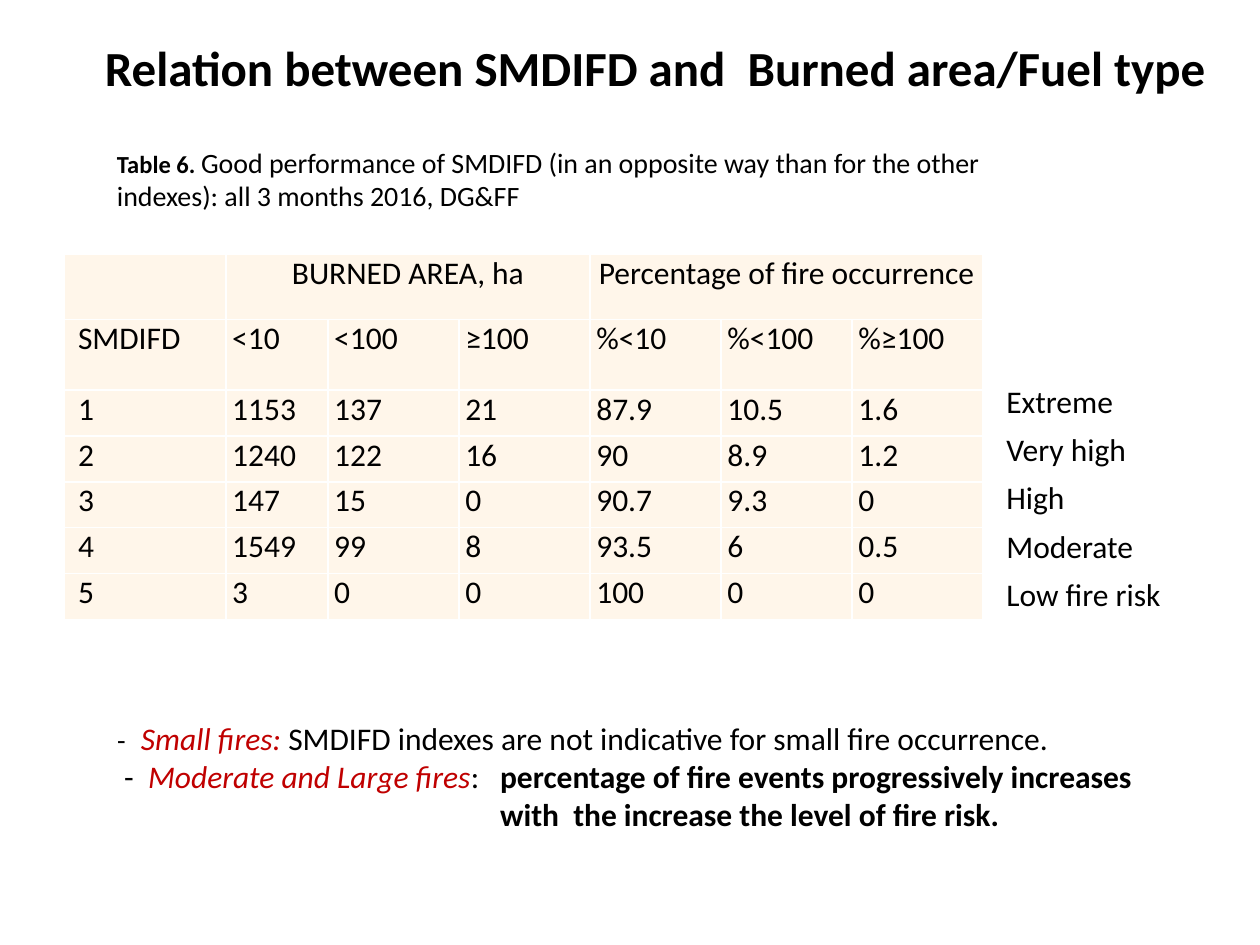
from dataclasses import dataclass

from lxml import etree
from pptx import Presentation
from pptx.dml.color import RGBColor
from pptx.enum.text import MSO_ANCHOR, PP_ALIGN
from pptx.oxml.ns import qn
from pptx.util import Pt

LEFT, CENTER = PP_ALIGN.LEFT, PP_ALIGN.CENTER
TOP, MIDDLE = MSO_ANCHOR.TOP, MSO_ANCHOR.MIDDLE
BLACK = RGBColor(0x00, 0x00, 0x00)
RED = RGBColor(0xC0, 0x00, 0x00)
CREAM = RGBColor(0xFF, 0xF6, 0xEA)
WHITE = RGBColor(0xFF, 0xFF, 0xFF)
FONT = "Calibri"

COLUMN_WIDTHS = [92.2, 58.3] + [74.9] * 5
ROW_HEIGHTS = [37.2, 40.3] + [26.2] * 5
GROUPS = {1: "BURNED AREA, ha", 4: "Percentage of fire occurrence"}
GROUP_SIZE = 3
ROWS = [
    ["SMDIFD", "<10", "<100", "≥100", "%<10", "%<100", "%≥100"],
    ["1", "1153", "137", "21", "87.9", "10.5", "1.6"],
    ["2", "1240", "122", "16", "90", "8.9", "1.2"],
    ["3", "147", "15", "0", "90.7", "9.3", "0"],
    ["4", "1549", "99", "8", "93.5", "6", "0.5"],
    ["5", "3", "0", "0", "100", "0", "0"],
]
RISK_LEVELS = ["Extreme", "Very high", "High", "Moderate", "Low fire risk"]


@dataclass
class Span:
    text: str
    size: float = 18
    color: RGBColor = BLACK
    bold: bool = False
    italic: bool = False


@dataclass
class Para:
    spans: list[Span]
    align: PP_ALIGN = LEFT
    after: float = 0
    hanging: float = 0


def write_para(target, para: Para) -> None:
    target.alignment = para.align
    target.space_after = Pt(para.after)
    if para.hanging:
        properties = target._p.get_or_add_pPr()
        properties.set("marL", str(Pt(para.hanging)))
        properties.set("indent", str(-Pt(para.hanging)))
    for span in para.spans:
        run = target.add_run()
        run.text = span.text
        run.font.name = FONT
        run.font.size = Pt(span.size)
        run.font.color.rgb = span.color
        run.font.bold = span.bold
        run.font.italic = span.italic


def add_text(page, left: float, top: float, width: float, height: float, paras: list[Para],
             *, anchor: MSO_ANCHOR = TOP, wrap: bool = True,
             side: float = 7.2, edge: float = 3.6) -> None:
    box = page.shapes.add_textbox(Pt(left), Pt(top), Pt(width), Pt(height))
    frame = box.text_frame
    frame.word_wrap = wrap
    frame.vertical_anchor = anchor
    frame.margin_left = frame.margin_right = Pt(side)
    frame.margin_top = frame.margin_bottom = Pt(edge)
    for index, para in enumerate(paras):
        write_para(frame.add_paragraph() if index else frame.paragraphs[0], para)


def style_cell(cell, inset: float) -> None:
    cell.margin_left, cell.margin_right = Pt(inset), Pt(3.6)
    cell.margin_top = cell.margin_bottom = Pt(0)
    properties = cell._tc.get_or_add_tcPr()
    for side in ("a:lnL", "a:lnR", "a:lnT", "a:lnB"):
        line = etree.SubElement(properties, qn(side), w=str(Pt(1)))
        fill = etree.SubElement(line, qn("a:solidFill"))
        etree.SubElement(fill, qn("a:srgbClr"), val=str(WHITE))
    cell.fill.solid()
    cell.fill.fore_color.rgb = CREAM


def add_fire_table(page, left: float, top: float) -> None:
    frame = page.shapes.add_table(
        len(ROW_HEIGHTS), len(COLUMN_WIDTHS), Pt(left), Pt(top),
        Pt(sum(COLUMN_WIDTHS)), Pt(sum(ROW_HEIGHTS)))
    table = frame.table
    table.first_row = table.horz_banding = False
    for column, width in zip(table.columns, COLUMN_WIDTHS):
        column.width = Pt(width)
    for row, height in zip(table.rows, ROW_HEIGHTS):
        row.height = Pt(height)
        for index, cell in enumerate(row.cells):
            style_cell(cell, 3.6 if index else 7.7)
    for start, label in GROUPS.items():
        heading = table.cell(0, start)
        heading.merge(table.cell(0, start + GROUP_SIZE - 1))
        write_para(heading.text_frame.paragraphs[0], Para([Span(label)], align=CENTER))
    for row_index, values in enumerate(ROWS, start=1):
        for column_index, value in enumerate(values):
            cell = table.cell(row_index, column_index)
            write_para(cell.text_frame.paragraphs[0], Para([Span(value)]))


def main() -> None:
    deck = Presentation()
    deck.slide_width, deck.slide_height = Pt(720), Pt(540)
    page = deck.slides.add_slide(deck.slide_layouts[6])

    title = Span("Relation between SMDIFD and  Burned area/Fuel type", size=28, bold=True)
    add_text(page, 48, 21, 652.5, 34.5, [Para([title], align=CENTER)], anchor=MIDDLE)

    add_fire_table(page, 36.9, 145.5)

    caption = Para([
        Span("Table 6. ", size=14, bold=True),
        Span("Good performance of SMDIFD (in an opposite way than for the other "
             "indexes): all 3 months 2016, DG&FF", size=16),
    ])
    add_text(page, 62.5, 80.6, 516, 43.2, [caption], anchor=MIDDLE, side=4.3, edge=2.2)

    small_fires = Para([
        Span("-\t", size=16),
        Span("Small fires: ", color=RED, italic=True),
        Span("SMDIFD indexes are not indicative for small fire occurrence."),
    ], hanging=13.7)
    large_fires = Para([
        Span(" -  "),
        Span("Moderate and Large fires", color=RED, italic=True),
        Span(":\t"),
        Span("percentage of fire events progressively increases with  "
             "the increase the level of fire risk.", bold=True),
    ], hanging=218.9)
    add_text(page, 59.8, 407.5, 607, 94.3, [small_fires, large_fires])

    levels = [Para([Span(level)], after=6) for level in RISK_LEVELS]
    add_text(page, 568, 214.6, 108, 140.4, levels, wrap=False)

    deck.save("out.pptx")


if __name__ == "__main__":
    main()
